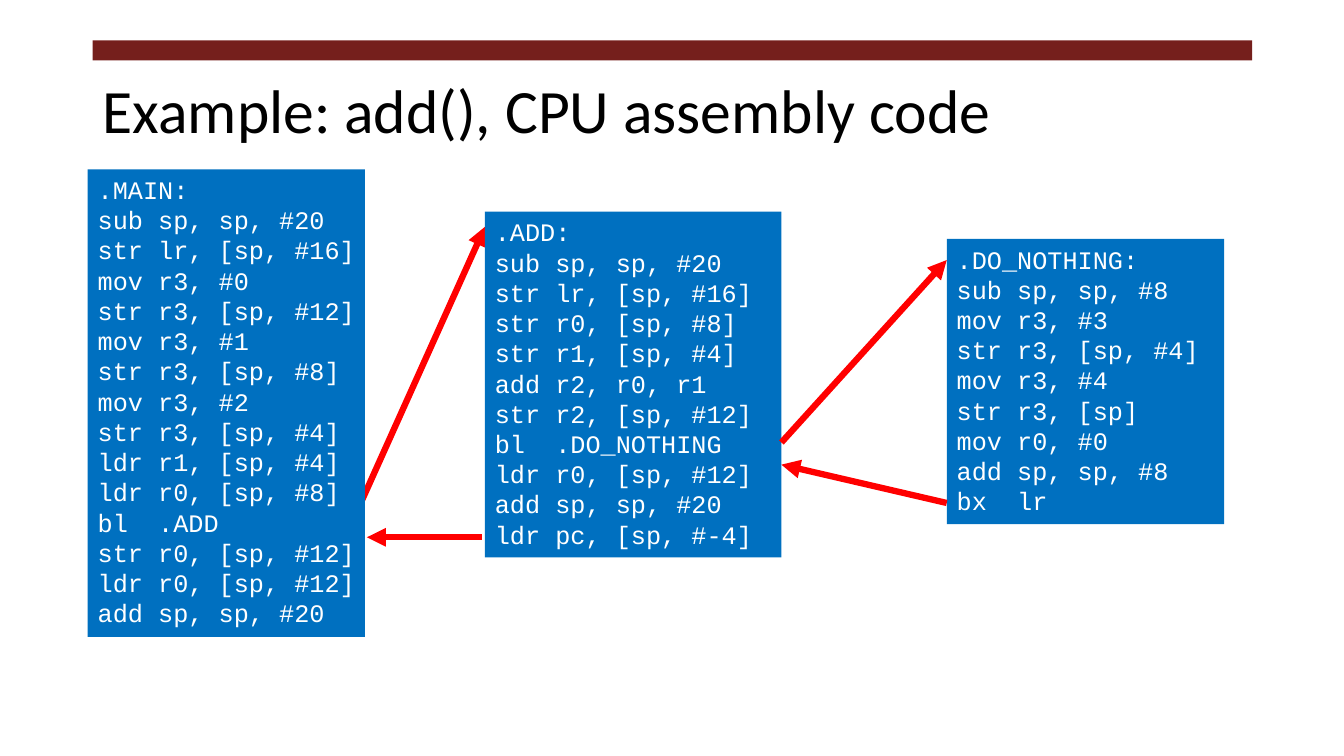
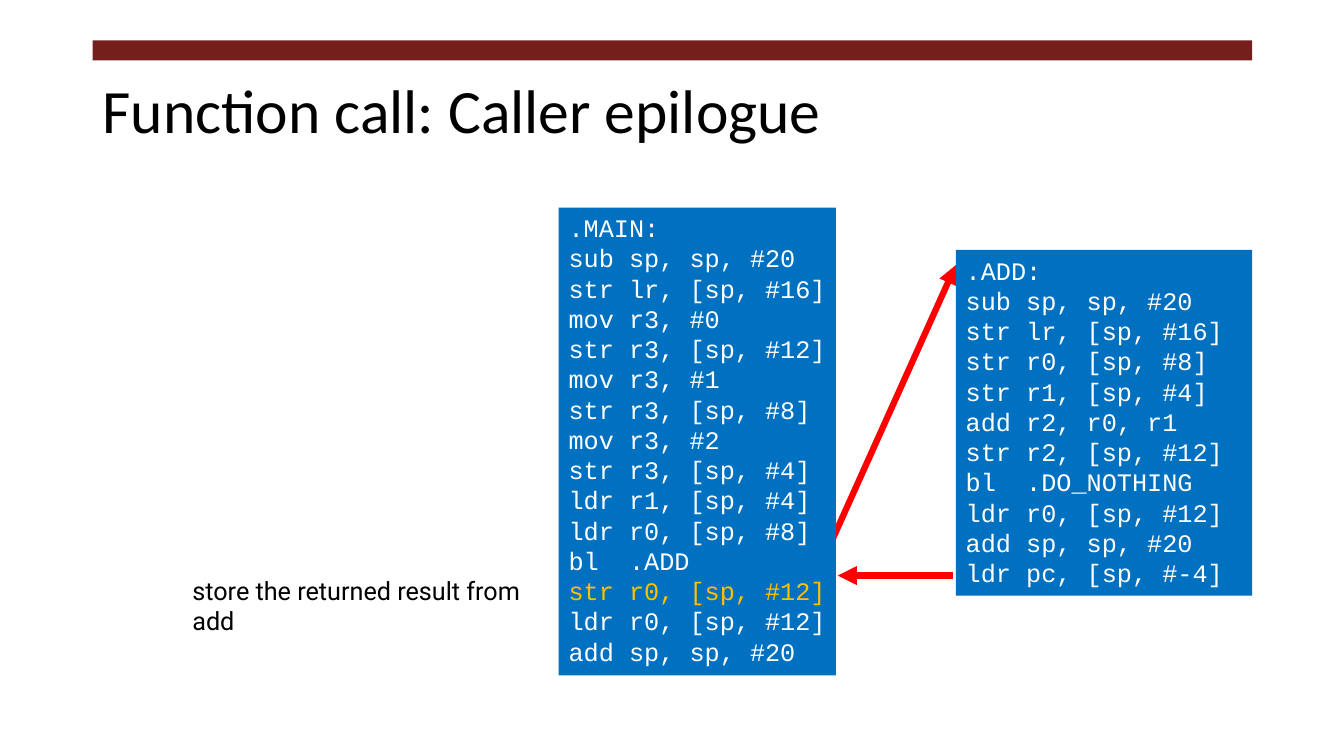
from dataclasses import dataclass

import pptx
import pptx.dml.color
import pptx.enum.shapes
import pptx.enum.text
import pptx.oxml
import pptx.oxml.ns
import pptx.presentation
import pptx.shapes.autoshape
import pptx.slide
import pptx.text.text
import pptx.util

Inches = pptx.util.Inches
Point = tuple[float, float]


@dataclass(frozen=True)
class Theme:
    band: str = "751F1C"
    code_fill: str = "0070C0"
    code_text: str = "FFFFFF"
    highlight: str = "FFC000"
    arrow: str = "FF0000"
    text: str = "000000"
    title_font: str = "Calibri"
    code_font: str = "Courier New"
    note_font: str = "Roboto"
    title_size: int = 44
    body_size: int = 18
    arrow_width: float = 4.5


@dataclass(frozen=True)
class Routine:
    code: str
    width: float
    height: float


@dataclass(frozen=True)
class Arrow:
    start: Point
    end: Point

    def shifted(self, origin: Point) -> "Arrow":
        return Arrow(shift(self.start, origin), shift(self.end, origin))


THEME = Theme()

# Assembly routines
MAIN = Routine(""".MAIN:
sub sp, sp, #20
str lr, [sp, #16]
mov r3, #0
str r3, [sp, #12]
mov r3, #1
str r3, [sp, #8]
mov r3, #2
str r3, [sp, #4]
ldr r1, [sp, #4]
ldr r0, [sp, #8]
bl  .ADD
str r0, [sp, #12]
ldr r0, [sp, #12]
add sp, sp, #20""", 2.75, 4.64)

ADD = Routine(""".ADD:
sub sp, sp, #20
str lr, [sp, #16]
str r0, [sp, #8]
str r1, [sp, #4]
add r2, r0, r1
str r2, [sp, #12]
bl  .DO_NOTHING
ldr r0, [sp, #12]
add sp, sp, #20
ldr pc, [sp, #-4]""", 2.94, 3.43)

DO_NOTHING = Routine(""".DO_NOTHING:
sub sp, sp, #8
mov r3, #3
str r3, [sp, #4]
mov r3, #4
str r3, [sp]
mov r0, #0
add sp, sp, #8
bx  lr""", 2.75, 2.83)

# Layout of the main/add pair, measured from the corner of the main routine
ADD_OFFSET = (3.94, 0.42)
CALL_ADD = Arrow((2.65, 3.44), (3.94, 0.57))
RETURN_FROM_ADD = Arrow((3.91, 3.65), (2.77, 3.65))
STORE_RESULT_LINE = 12


def shift(point: Point, origin: Point) -> Point:
    return point[0] + origin[0], point[1] + origin[1]


def rgb(value: str) -> pptx.dml.color.RGBColor:
    return pptx.dml.color.RGBColor.from_string(value)


def style(para: pptx.text.text._Paragraph, font: str, size: int, color: str) -> None:
    para.font.name = font
    para.font.size = pptx.util.Pt(size)
    para.font.color.rgb = rgb(color)


def add_text(page: pptx.slide.Slide, text: str, corner: Point, width: float, height: float,
             font: str, size: int, color: str) -> pptx.shapes.autoshape.Shape:
    box = page.shapes.add_textbox(Inches(corner[0]), Inches(corner[1]),
                                  Inches(width), Inches(height))
    box.text_frame.word_wrap = True
    box.text_frame.text = text
    for para in box.text_frame.paragraphs:
        style(para, font, size, color)
    return box


def add_page(deck: pptx.presentation.Presentation, title: str) -> pptx.slide.Slide:
    """Add a blank page with the band and the title."""
    page = deck.slides.add_slide(deck.slide_layouts[6])
    band = page.shapes.add_shape(pptx.enum.shapes.MSO_SHAPE.RECTANGLE,
                                 Inches(0.92), Inches(0.4), Inches(11.5), Inches(0.2))
    band.shadow.inherit = False
    band.fill.solid()
    band.fill.fore_color.rgb = rgb(THEME.band)
    band.line.fill.background()

    box = add_text(page, title, (0.92, 0.4), 11.5, 1.45,
                   THEME.title_font, THEME.title_size, THEME.text)
    box.text_frame.vertical_anchor = pptx.enum.text.MSO_ANCHOR.MIDDLE
    box.text_frame.paragraphs[0].line_spacing = 0.9
    return page


def add_routine(page: pptx.slide.Slide, routine: Routine, corner: Point,
                highlighted: int | None = None) -> None:
    box = add_text(page, routine.code, corner, routine.width, routine.height,
                   THEME.code_font, THEME.body_size, THEME.code_text)
    box.text_frame.margin_right = 0
    box.fill.solid()
    box.fill.fore_color.rgb = rgb(THEME.code_fill)
    if highlighted is not None:
        box.text_frame.paragraphs[highlighted].font.color.rgb = rgb(THEME.highlight)


def add_arrow(page: pptx.slide.Slide, arrow: Arrow) -> None:
    ends = [Inches(value) for value in (*arrow.start, *arrow.end)]
    line = page.shapes.add_connector(pptx.enum.shapes.MSO_CONNECTOR.STRAIGHT, *ends)
    line.line.color.rgb = rgb(THEME.arrow)
    line.line.width = pptx.util.Pt(THEME.arrow_width)
    namespace = pptx.oxml.ns.nsdecls("a")
    line.line._get_or_add_ln().append(
        pptx.oxml.parse_xml(f'<a:tailEnd {namespace} type="triangle"/>'))
    line._element.spPr.append(pptx.oxml.parse_xml(f"<a:effectLst {namespace}/>"))


def add_main_and_add(page: pptx.slide.Slide, corner: Point,
                     highlighted: int | None = None) -> None:
    """Draw main calling add; the call arrow lies behind the routines."""
    add_arrow(page, CALL_ADD.shifted(corner))
    add_routine(page, ADD, shift(ADD_OFFSET, corner))
    add_routine(page, MAIN, corner, highlighted)
    add_arrow(page, RETURN_FROM_ADD.shifted(corner))


def add_example_page(deck: pptx.presentation.Presentation) -> None:
    page = add_page(deck, "Example: add(), CPU assembly code")
    add_main_and_add(page, (0.87, 1.68))
    add_routine(page, DO_NOTHING, (9.39, 2.37))
    add_arrow(page, Arrow((7.75, 4.39), (9.39, 2.58)))
    add_arrow(page, Arrow((9.39, 4.99), (7.75, 4.61)))


def add_epilogue_page(deck: pptx.presentation.Presentation) -> None:
    page = add_page(deck, "Function call: Caller epilogue")
    add_main_and_add(page, (5.54, 2.06), STORE_RESULT_LINE)
    add_text(page, "store the returned result from add", (1.81, 5.66), 3.73, 0.7,
             THEME.note_font, THEME.body_size, THEME.text)


def main() -> None:
    deck = pptx.Presentation()
    deck.slide_width = Inches(13.33)
    deck.slide_height = Inches(7.5)
    add_example_page(deck)
    add_epilogue_page(deck)
    deck.save("out.pptx")


if __name__ == "__main__":
    main()
